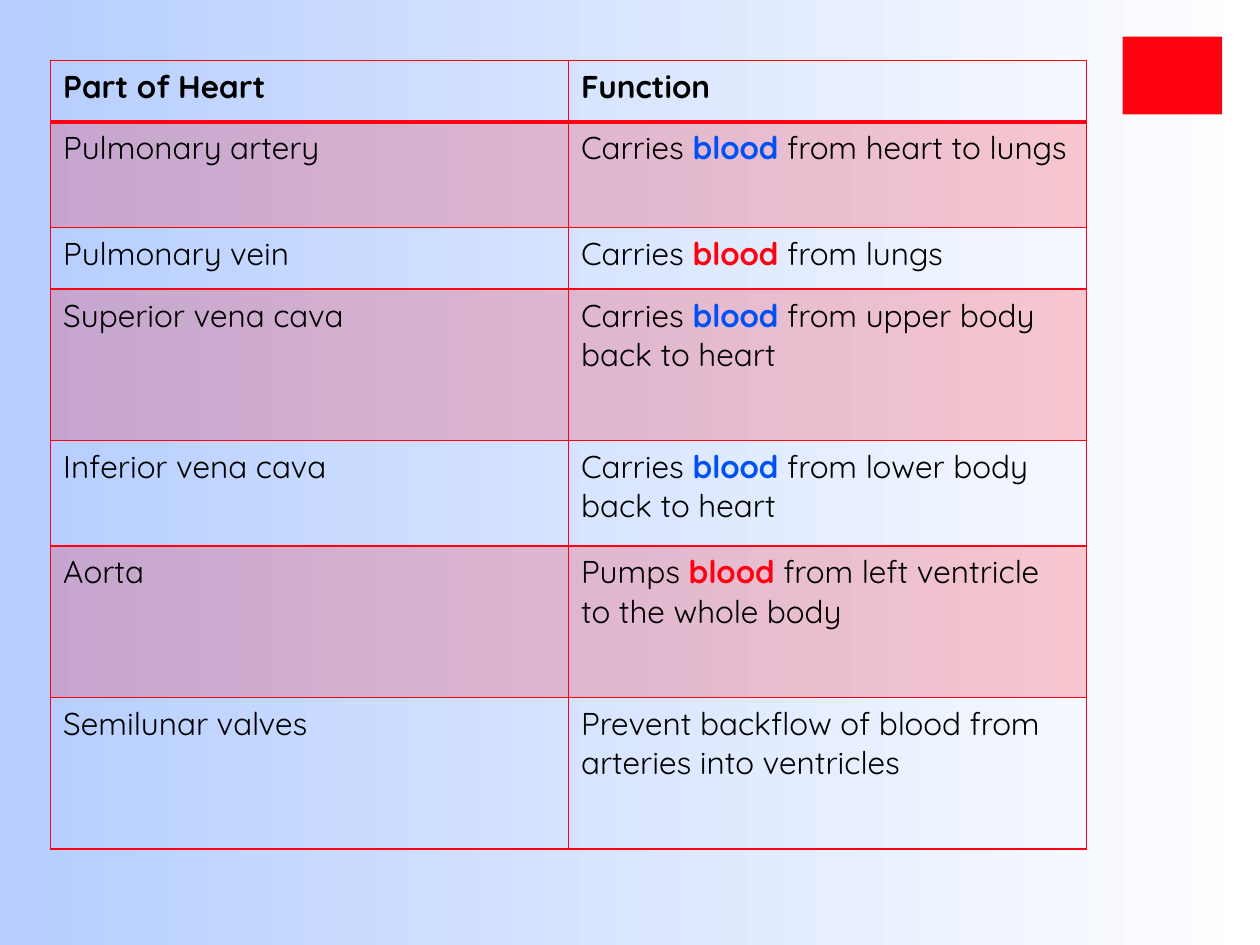
import lxml.etree
import pptx
import pptx.dml.color
import pptx.enum.shapes
import pptx.oxml.ns
import pptx.util

Cm = pptx.util.Cm
Pt = pptx.util.Pt
RGBColor = pptx.dml.color.RGBColor
qn = pptx.oxml.ns.qn

RED = RGBColor(0xFF, 0x02, 0x11)
BLUE = RGBColor(0x00, 0x51, 0xF3)
BLACK = RGBColor(0x00, 0x00, 0x00)
SKY = RGBColor(0xB5, 0xCD, 0xFF)
WHITE = RGBColor(0xFF, 0xFF, 0xFF)
FONT = "Quicksand"

# Row height in cm, part of the heart, function as (text, highlight colour) pieces
HEART_PARTS = [
    (1.24, "Part of Heart", [("Function", None)]),
    (2.13, "Pulmonary artery",
     [("Carries ", None), ("blood", BLUE), (" from heart to lungs", None)]),
    (1.24, "Pulmonary vein",
     [("Carries ", None), ("blood", RED), (" from lungs", None)]),
    (3.05, "Superior vena cava",
     [("Carries ", None), ("blood", BLUE), (" from upper body back to heart", None)]),
    (2.13, "Inferior vena cava",
     [("Carries ", None), ("blood", BLUE), (" from lower body back to heart", None)]),
    (3.05, "Aorta",
     [("Pumps ", None), ("blood", RED), (" from left ventricle to the whole body", None)]),
    (3.05, "Semilunar valves",
     [("Prevent backflow of blood from arteries into ventricles", None)]),
]


def paint_background(slide):
    fill = slide.background.fill
    fill.gradient()
    fill.gradient_angle = 0
    for stop, color in zip(fill.gradient_stops, (SKY, WHITE)):
        stop.color.rgb = color


def add_corner_block(slide, left, top, width, height):
    block = slide.shapes.add_shape(
        pptx.enum.shapes.MSO_SHAPE.RECTANGLE, left, top, width, height)
    block.shadow.inherit = False
    block.fill.solid()
    block.fill.fore_color.rgb = RED
    block.line.fill.background()


def fill_cell(cell, tinted):
    if not tinted:
        cell.fill.background()
        return
    cell.fill.solid()
    cell.fill.fore_color.rgb = RED
    color = cell._tc.tcPr.find(qn("a:solidFill")).find(qn("a:srgbClr"))
    lxml.etree.SubElement(color, qn("a:alpha")).set("val", "20000")


def border_cell(cell, top_width, bottom_width):
    widths = {"a:lnL": 1, "a:lnR": 1, "a:lnT": top_width, "a:lnB": bottom_width}
    properties = cell._tc.get_or_add_tcPr()
    for position, (side, width) in enumerate(widths.items()):
        edge = lxml.etree.Element(qn(side), w=str(Pt(width)))
        solid = lxml.etree.SubElement(edge, qn("a:solidFill"))
        lxml.etree.SubElement(solid, qn("a:srgbClr"), val=str(RED))
        # Borders come before the fill in the cell properties
        properties.insert(position, edge)


def write_cell(cell, pieces, is_header):
    paragraph = cell.text_frame.paragraphs[0]
    for text, highlight in pieces:
        run = paragraph.add_run()
        run.text = text
        run.font.name = FONT
        run.font.size = Pt(18)
        run.font.bold = is_header or highlight is not None
        run.font.color.rgb = highlight or BLACK


def add_heart_table(slide, left, top, width, height):
    table = slide.shapes.add_table(
        len(HEART_PARTS), 2, left, top, width, height).table
    table.first_row = False
    table.horz_banding = False
    for column in table.columns:
        column.width = width // 2

    for index, (row_height, part, function) in enumerate(HEART_PARTS):
        table.rows[index].height = Cm(row_height)
        for cell, pieces in zip(table.rows[index].cells, ([(part, None)], function)):
            write_cell(cell, pieces, is_header=index == 0)
            fill_cell(cell, tinted=index % 2 == 1)
            # The rule below the header is double weight
            border_cell(cell, top_width=2 if index == 1 else 1,
                        bottom_width=2 if index == 0 else 1)


def main():
    presentation = pptx.Presentation()
    presentation.slide_width = Cm(25.4)
    presentation.slide_height = Cm(19.05)
    slide = presentation.slides.add_slide(presentation.slide_layouts[6])

    paint_background(slide)
    add_corner_block(slide, Cm(22.63), Cm(0.74), Cm(2.01), Cm(1.57))
    add_heart_table(slide, Cm(1.02), Cm(1.22), Cm(20.88), Cm(15.89))

    presentation.save("out.pptx")


if __name__ == "__main__":
    main()
